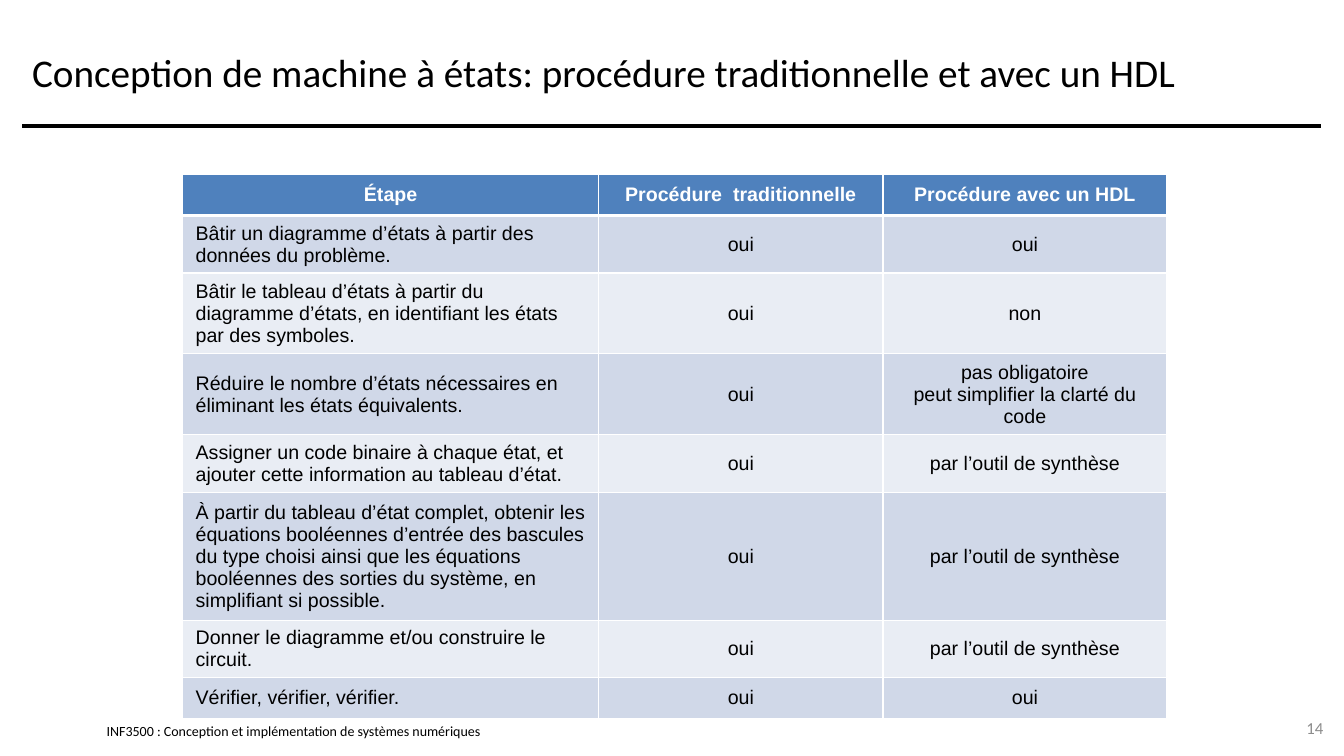
from dataclasses import dataclass

from lxml import etree
from pptx import Presentation
from pptx import util as u
from pptx.dml.color import RGBColor
from pptx.enum import shapes, text
from pptx.oxml import ns

Cm, Pt = u.Cm, u.Pt
LEFT, MID, RIGHT = text.PP_ALIGN.LEFT, text.PP_ALIGN.CENTER, text.PP_ALIGN.RIGHT


@dataclass(frozen=True)
class Theme:
    """Colours, fonts and type sizes of the slide."""
    ink: str = "000000"
    grey: str = "8C8C8C"
    white: str = "FFFFFF"
    head: str = "4F81BD"
    bands: tuple = ("E9EDF4", "D0D8E8")
    sans: str = "Calibri"
    grid: str = "Arial"
    title: int = 28
    body: int = 14
    page: int = 12
    foot: int = 10


THEME = Theme()
WIDTHS = (10.49, 7.16, 7.16)
HEIGHT = 1.03
TOOL = "par l’outil de synthèse"
STEPS = (
    ("Étape", "Procédure  traditionnelle", "Procédure avec un HDL"),
    ("Bâtir un diagramme d’états à partir des données du problème.", "oui", "oui"),
    ("Bâtir le tableau d’états à partir du diagramme d’états, "
     "en identifiant les états par des symboles.", "oui", "non"),
    ("Réduire le nombre d’états nécessaires en éliminant les états équivalents.",
     "oui", "pas obligatoire\npeut simplifier la clarté du code"),
    ("Assigner un code binaire à chaque état, et ajouter cette information "
     "au tableau d’état.", "oui", TOOL),
    ("À partir du tableau d’état complet, obtenir les équations booléennes "
     "d’entrée des bascules du type choisi ainsi que les équations booléennes "
     "des sorties du système, en simplifiant si possible.", "oui", TOOL),
    ("Donner le diagramme et/ou construire le circuit.", "oui", TOOL),
    ("Vérifier, vérifier, vérifier.", "oui", "oui"),
)


def style(frame, size, face, tint, align=LEFT, bold=False):
    """Format every run of a text frame."""
    for para in frame.paragraphs:
        para.alignment = align
        for run in para.runs:
            font = run.font
            font.size, font.name, font.bold = Pt(size), face, bold
            font.color.rgb = RGBColor.from_string(tint)


def label(slide, words, box, size, tint, align=LEFT, inset=(0.25, 0.13)):
    """Add a text box centred on its height."""
    frame = slide.shapes.add_textbox(*map(Cm, box)).text_frame
    frame.word_wrap = True
    frame.vertical_anchor = text.MSO_ANCHOR.MIDDLE
    frame.margin_left = frame.margin_right = Cm(inset[0])
    frame.margin_top = frame.margin_bottom = Cm(inset[1])
    frame.text = words
    style(frame, size, THEME.sans, tint, align)


def rule(slide, left, right, top):
    """Add the thick line under the title."""
    line = slide.shapes.add_connector(
        shapes.MSO_CONNECTOR.STRAIGHT, Cm(left), Cm(top), Cm(right), Cm(top))
    line.line.width = Pt(3)
    line.line.color.rgb = RGBColor.from_string(THEME.ink)
    etree.SubElement(line._element.spPr, ns.qn("a:effectLst"))


def edge(cell, side, width):
    """Draw one white border of a cell."""
    props = cell._tc.get_or_add_tcPr()
    line = etree.SubElement(props, ns.qn(f"a:ln{side}"), w=str(Pt(width)))
    fill = etree.SubElement(line, ns.qn("a:solidFill"))
    etree.SubElement(fill, ns.qn("a:srgbClr"), val=THEME.white)


def fill_cell(cell, words, row, col):
    """Write and format one cell of the table."""
    head = row == 0
    cell.text = words
    cell.vertical_anchor = text.MSO_ANCHOR.MIDDLE
    cell.margin_left = cell.margin_right = Cm(0.33)
    cell.margin_top = cell.margin_bottom = Cm(0.13)
    for side in "LRTB":
        edge(cell, side, 3 if (row, side) in ((0, "B"), (1, "T")) else 1)
    cell.fill.solid()
    tint = THEME.head if head else THEME.bands[row % 2]
    cell.fill.fore_color.rgb = RGBColor.from_string(tint)
    style(cell.text_frame, THEME.body, THEME.grid,
          THEME.white if head else THEME.ink,
          MID if head or col else LEFT, head)


def grid(slide, left, top):
    """Add the table of design steps."""
    size = (sum(WIDTHS), HEIGHT * len(STEPS))
    table = slide.shapes.add_table(
        len(STEPS), len(WIDTHS), Cm(left), Cm(top), *map(Cm, size)).table
    for col, width in zip(table.columns, WIDTHS):
        col.width = Cm(width)
    for row, step in enumerate(STEPS):
        table.rows[row].height = Cm(HEIGHT)
        for col, words in enumerate(step):
            fill_cell(table.cell(row, col), words, row, col)


def main():
    """Build the slide and save it."""
    deck = Presentation()
    deck.slide_width, deck.slide_height = Cm(33.87), Cm(19.05)
    slide = deck.slides.add_slide(deck.slide_layouts[6])
    label(slide, "INF3500 : Conception et implémentation de systèmes numériques",
          (2.69, 18.21, 12.98, 0.43), THEME.foot, THEME.ink, inset=(0, 0))
    rule(slide, 0.56, 33.3, 3.17)
    label(slide, "Conception de machine à états: procédure traditionnelle et avec un HDL",
          (0.56, 0.43, 32.74, 2.74), THEME.title, THEME.ink)
    grid(slide, 4.6, 4.4)
    label(slide, "14", (31.9, 17.83, 1.7, 1.02), THEME.page, THEME.grey, RIGHT)
    deck.save("out.pptx")


if __name__ == "__main__":
    main()
